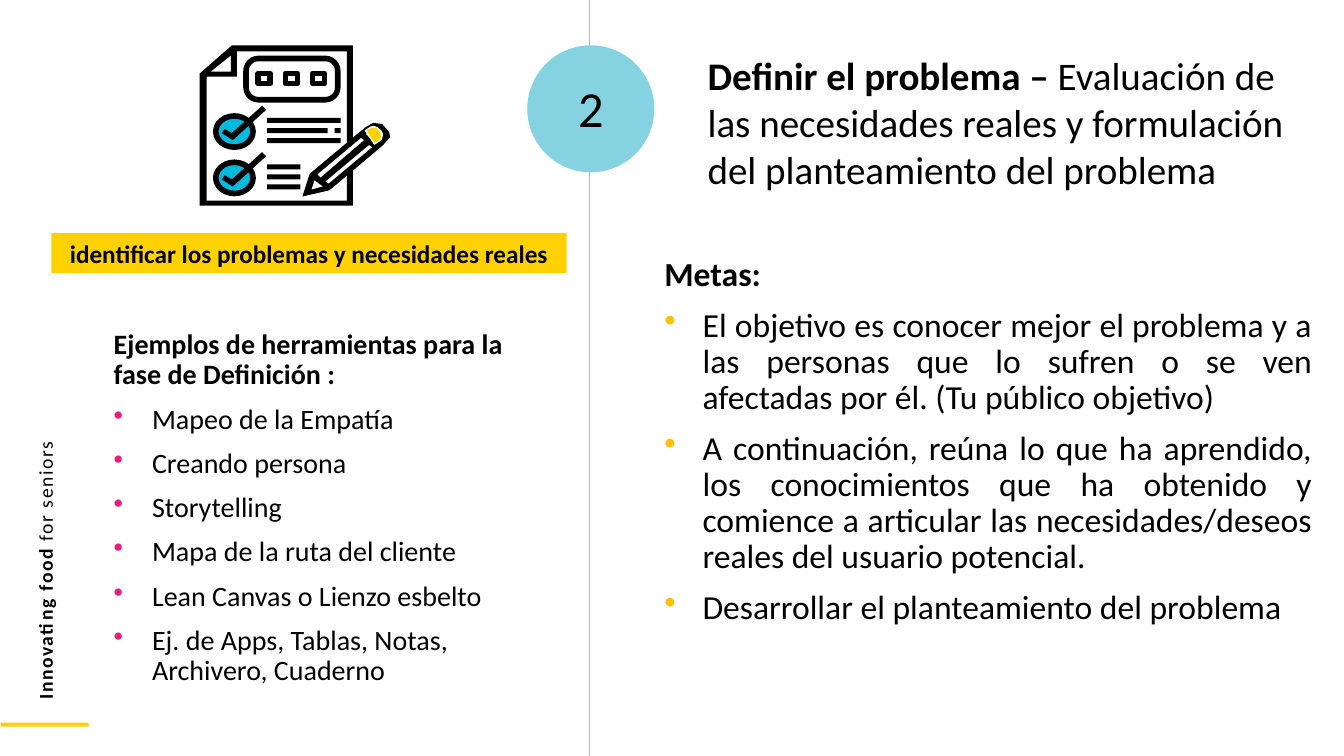
from dataclasses import dataclass

from lxml.etree import SubElement
from pptx import Presentation
from pptx.dml.color import RGBColor
from pptx.enum.shapes import MSO_CONNECTOR, MSO_SHAPE
from pptx.enum.text import PP_ALIGN
from pptx.oxml.ns import qn
from pptx.util import Inches, Pt

BLACK, WHITE = "000000", "FFFFFF"
YELLOW, AQUA, CYAN = "FFD100", "85D2E1", "00BADE"
AMBER, PINK, GREY = "FFC000", "EC1C7E", "B4B4B4"

Contour = list[tuple[float, float]]


@dataclass
class Span:
    text: str
    bold: bool = False


@dataclass
class Para:
    spans: list[Span]
    bullet: str = ""
    align: PP_ALIGN = PP_ALIGN.LEFT


@dataclass
class TextBox:
    at: tuple[float, float, float, float]
    size: float
    paras: list[Para]
    line_spacing: float = 0.9
    rotation: float = 0
    tracking: int = 0


def color(value: str) -> RGBColor:
    return RGBColor.from_string(value)


def style(shape, fill: str, line: str = "", width: float = 1) -> None:
    shape.shadow.inherit = False
    shape.fill.solid()
    shape.fill.fore_color.rgb = color(fill)
    if line:
        shape.line.color.rgb = color(line)
        shape.line.width = Pt(width)
    else:
        shape.line.fill.background()


def draw_shape(page, kind, at, fill: str, line: str = "", width: float = 1):
    shape = page.shapes.add_shape(kind, *map(Inches, at))
    style(shape, fill, line, width)
    return shape


def draw_outline(page, contours: list[Contour], fill: str) -> None:
    """Draw closed contours as one shape; inner contours become holes."""
    builder = None
    for contour in contours:
        start, *rest = [(Inches(x), Inches(y)) for x, y in contour]
        if builder is None:
            builder = page.shapes.build_freeform(*start)
        else:
            builder.move_to(*start)
        builder.add_line_segments(rest, close=True)
    style(builder.convert_to_shape(), fill)


def add_bullet(paragraph, bullet_color: str) -> None:
    properties = paragraph._p.get_or_add_pPr()
    properties.set("marL", str(Inches(0.38)))
    properties.set("indent", str(Inches(-0.38)))
    holder = SubElement(properties, qn("a:buClr"))
    SubElement(holder, qn("a:srgbClr")).set("val", bullet_color)
    SubElement(properties, qn("a:buChar")).set("char", "•")


def fill_text(shape, box: TextBox) -> None:
    frame = shape.text_frame
    frame.word_wrap = True
    for index, para in enumerate(box.paras):
        paragraph = frame.add_paragraph() if index else frame.paragraphs[0]
        if para.bullet:
            add_bullet(paragraph, para.bullet)
        paragraph.alignment = para.align
        paragraph.line_spacing = box.line_spacing
        paragraph.space_before = Pt(10 if index else 0)
        for span in para.spans:
            run = paragraph.add_run()
            run.text = span.text
            run.font.name = "Calibri"
            run.font.size = Pt(box.size)
            run.font.bold = span.bold
            run.font.color.rgb = color(BLACK)
            if box.tracking:
                run.font._element.set("spc", str(box.tracking))


def draw_text(page, box: TextBox) -> None:
    shape = page.shapes.add_textbox(*map(Inches, box.at))
    shape.rotation = box.rotation
    fill_text(shape, box)


def draw_divider(page) -> None:
    line = page.shapes.add_connector(
        MSO_CONNECTOR.STRAIGHT, Inches(5.85), Inches(0), Inches(5.85), Inches(7.5))
    line.line.color.rgb = color(GREY)
    line.line.width = Pt(0.75)
    SubElement(line._element.spPr, qn("a:effectLst"))


def draw_checklist(page) -> None:
    sheet = [
        [(2.3, 0.45), (3.5, 0.45), (3.5, 2.04), (1.98, 2.04), (1.98, 0.73)],
        [(2.35, 0.51), (3.44, 0.51), (3.44, 1.99), (2.05, 1.99), (2.05, 0.76), (2.35, 0.76)],
        [(2.09, 0.71), (2.29, 0.71), (2.29, 0.55)],
    ]
    draw_outline(page, sheet, BLACK)

    header = draw_shape(page, MSO_SHAPE.ROUNDED_RECTANGLE, (2.44, 0.58, 0.91, 0.41),
                        WHITE, BLACK, 4)
    header.adjustments[0] = 0.3
    for column in range(3):
        draw_shape(page, MSO_SHAPE.RECTANGLE, (2.56 + 0.27 * column, 0.73, 0.12, 0.1),
                   WHITE, BLACK, 4)

    for top in (1.12, 1.58):
        draw_shape(page, MSO_SHAPE.OVAL, (2.14, top + 0.03, 0.37, 0.31), CYAN, BLACK, 4)
        tick = [(2.6, -0.07), (2.64, -0.03), (2.31, 0.27), (2.2, 0.2), (2.23, 0.16), (2.3, 0.2)]
        draw_outline(page, [[(x, top + y) for x, y in tick]], BLACK)

    for first, widths in ((1.17, (0.73, 0.6, 0.73)), (1.63, (0.33, 0.33, 0.33))):
        for row, width in enumerate(widths):
            draw_shape(page, MSO_SHAPE.RECTANGLE,
                       (2.65, first + 0.1 * row, width, 0.05), BLACK)
    draw_shape(page, MSO_SHAPE.RECTANGLE, (3.32, 1.27, 0.06, 0.05), BLACK)

    pencil = [(3.52, 1.35), (3.63, 1.26), (3.7, 1.22), (3.79, 1.23), (3.86, 1.31),
              (3.87, 1.36), (3.8, 1.44), (3.29, 1.87), (3.26, 1.89), (3, 1.95),
              (3.07, 1.73), (3.09, 1.71)]
    highlights = [
        [(3.58, 1.37), (3.15, 1.73), (3.18, 1.76), (3.61, 1.39)],
        [(3.26, 1.82), (3.69, 1.46), (3.66, 1.44), (3.23, 1.8)],
        [(3.73, 1.42), (3.79, 1.38), (3.8, 1.33), (3.78, 1.29), (3.73, 1.27),
         (3.68, 1.29), (3.63, 1.33)],
        [(3.12, 1.79), (3.09, 1.88), (3.2, 1.85)],
    ]
    draw_outline(page, [pencil], BLACK)
    draw_outline(page, highlights, WHITE)
    eraser = draw_shape(page, MSO_SHAPE.FLOWCHART_DELAY, (3.66, 1.25, 0.12, 0.16),
                        YELLOW, WHITE, 1)
    eraser.rotation = 326.6


GOALS = [
    "El objetivo es conocer mejor el problema y a las personas que lo sufren o se ven "
    "afectadas por él. (Tu público objetivo)",
    "A continuación, reúna lo que ha aprendido, los conocimientos que ha obtenido y "
    "comience a articular las necesidades/deseos reales del usuario potencial.",
    "Desarrollar el planteamiento del problema",
]
TOOLS = ["Mapeo de la Empatía", "Creando persona", "Storytelling",
         "Mapa de la ruta del cliente", "Lean Canvas o Lienzo esbelto",
         "Ej. de Apps, Tablas, Notas, Archivero, Cuaderno"]
TEXT_BOXES = [
    TextBox((-3.32, 3.1, 7.54, 0.34), 14,
            [Para([Span("Innovating food ", True), Span("for seniors")])],
            line_spacing=1, rotation=270, tracking=110),
    TextBox((6.49, 2.51, 6.62, 4.07), 24,
            [Para([Span("Metas:", True)])]
            + [Para([Span(goal)], AMBER, PP_ALIGN.JUSTIFY) for goal in GOALS]),
    TextBox((6.92, 0.46, 5.94, 1.8), 27.9,
            [Para([Span("Definir el problema – ", True),
                   Span("Evaluación de las necesidades reales y formulación "
                        "del planteamiento del problema")])], line_spacing=1),
    TextBox((1.03, 3.23, 4.2, 3.76), 20,
            [Para([Span("Ejemplos de herramientas para la fase de Definición :", True)])]
            + [Para([Span(tool)], PINK) for tool in TOOLS]),
    TextBox((5.23, 0.78, 1.26, 0.94), 36, [Para([Span("2")], align=PP_ALIGN.CENTER)]),
]
BANNER = TextBox((0.51, 2.31, 5.11, 0.4), 18,
                 [Para([Span("identificar los problemas y necesidades reales", True)],
                       align=PP_ALIGN.CENTER)], line_spacing=1)


def main() -> None:
    deck = Presentation()
    deck.slide_width, deck.slide_height = Inches(13.33), Inches(7.5)
    page = deck.slides.add_slide(deck.slide_layouts[6])
    draw_divider(page)
    draw_shape(page, MSO_SHAPE.OVAL, (5.23, 0.45, 1.26, 1.26), AQUA)
    draw_shape(page, MSO_SHAPE.RECTANGLE, (0.01, 7.17, 0.87, 0.04), YELLOW)
    for box in TEXT_BOXES:
        draw_text(page, box)
    fill_text(draw_shape(page, MSO_SHAPE.RECTANGLE, BANNER.at, YELLOW), BANNER)
    draw_checklist(page)
    deck.save("out.pptx")


if __name__ == "__main__":
    main()
